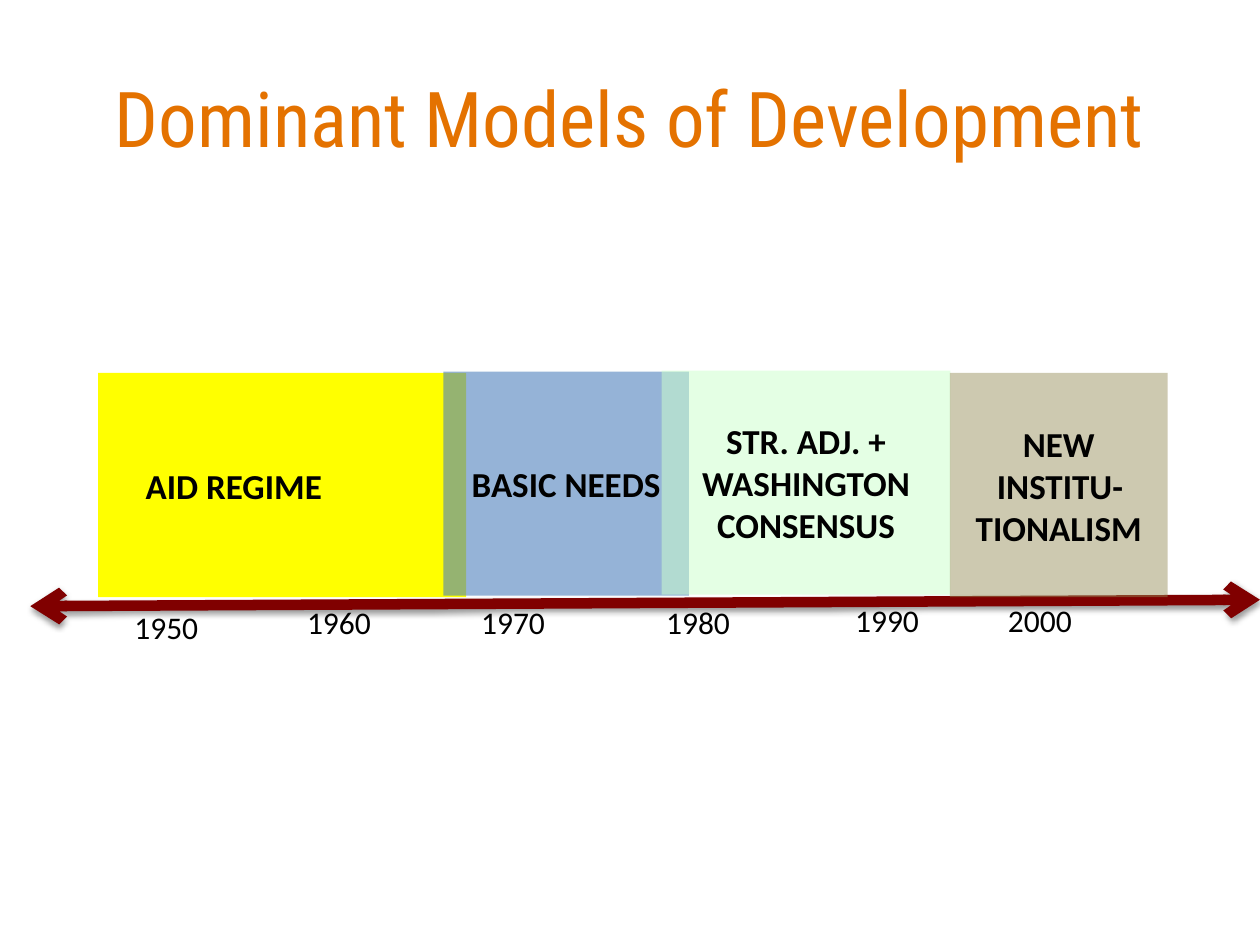
from dataclasses import dataclass

from lxml.etree import SubElement
from pptx import Presentation
from pptx.dml.color import RGBColor
from pptx.enum.shapes import MSO_CONNECTOR, MSO_SHAPE
from pptx.enum.text import MSO_ANCHOR, PP_ALIGN
from pptx.oxml.ns import qn
from pptx.util import Cm, Pt


@dataclass(frozen=True)
class Theme:
    title_font: str = "Roboto Condensed"
    body_font: str = "Calibri"
    title: str = "E47200"
    text: str = "000000"
    axis: str = "800000"
    aid: str = "FFFF00"
    needs: str = "4F81BD"
    consensus: str = "CCFFCC"
    institutions: str = "948A54"
    title_size: int = 44
    era_size: int = 20
    year_size: int = 18
    axis_width: int = 6


THEME = Theme()
ERA_HEIGHT = 4.52

# text, left, top, width, colour, opacity in percent, right inset
ERAS = [
    ("AID REGIME", 1.98, 7.52, 7.42, THEME.aid, 100, 2.2),
    ("BASIC NEEDS", 8.94, 7.49, 4.95, THEME.needs, 60, 0.25),
    ("STR. ADJ. + WASHINGTON CONSENSUS", 13.34, 7.47, 5.82, THEME.consensus, 53, 0.25),
    ("NEW INSTITU-TIONALISM", 19.15, 7.52, 4.39, THEME.institutions, 46, 0.25),
]

# year, left, top
YEARS = [
    ("1950", 2.46, 12.14),
    ("1960", 5.94, 12.04),
    ("1970", 9.45, 12.04),
    ("1980", 13.18, 12.04),
    ("1990", 16.99, 11.99),
    ("2000", 20.07, 11.99),
]


def write(s, text, size, font=THEME.body_font, color=THEME.text, bold=False,
          align=PP_ALIGN.CENTER, anchor=MSO_ANCHOR.MIDDLE, right=0.25):
    tf = s.text_frame
    tf.word_wrap = True
    tf.vertical_anchor = anchor
    tf.margin_right = Cm(right)
    p = tf.paragraphs[0]
    p.alignment = align
    r = p.add_run()
    r.text = text
    r.font.name, r.font.size, r.font.bold = font, Pt(size), bold
    r.font.color.rgb = RGBColor.from_string(color)


def add_text(slide, text, left, top, width, height, **style):
    s = slide.shapes.add_textbox(Cm(left), Cm(top), Cm(width), Cm(height))
    write(s, text, **style)


def add_era(slide, text, left, top, width, color, opacity, right):
    s = slide.shapes.add_shape(MSO_SHAPE.RECTANGLE, Cm(left), Cm(top),
                               Cm(width), Cm(ERA_HEIGHT))
    s.shadow.inherit = False
    s.line.fill.background()
    s.fill.solid()
    s.fill.fore_color.rgb = RGBColor.from_string(color)
    if opacity < 100:
        clr = s.fill._xPr.find(qn("a:solidFill"))[0]
        SubElement(clr, qn("a:alpha"), val=str(opacity * 1000))
    write(s, text, THEME.era_size, bold=True, right=right)


def add_time_axis(slide, x1, y1, x2, y2):
    """Draw a double-headed arrow with a soft shadow below it."""
    s = slide.shapes.add_connector(MSO_CONNECTOR.STRAIGHT,
                                   Cm(x1), Cm(y1), Cm(x2), Cm(y2))
    s.line.width = Pt(THEME.axis_width)
    s.line.color.rgb = RGBColor.from_string(THEME.axis)
    ln = s.line._get_or_add_ln()
    for end in ("a:headEnd", "a:tailEnd"):
        SubElement(ln, qn(end), type="arrow")
    effects = SubElement(s._element.spPr, qn("a:effectLst"))
    shadow = SubElement(effects, qn("a:outerShdw"), blurRad=str(Pt(3.1)),
                        dist=str(Pt(1.6)), dir="5400000", rotWithShape="0")
    clr = SubElement(shadow, qn("a:srgbClr"), val=THEME.text)
    SubElement(clr, qn("a:alpha"), val="38000")


def main():
    prs = Presentation()
    prs.slide_width, prs.slide_height = Cm(25.4), Cm(19.05)
    slide = prs.slides.add_slide(prs.slide_layouts[6])
    add_text(slide, "Dominant Models of Development", 1.27, 0.76, 22.86, 3.18,
             size=THEME.title_size, font=THEME.title_font, color=THEME.title)
    add_time_axis(slide, 0.61, 12.22, 25.4, 12.09)
    for year, left, top in YEARS:
        add_text(slide, year, left, top, 2.16, 1.02, size=THEME.year_size,
                 align=PP_ALIGN.LEFT, anchor=MSO_ANCHOR.TOP)
    for era in ERAS:
        add_era(slide, *era)
    prs.save("out.pptx")


if __name__ == "__main__":
    main()
